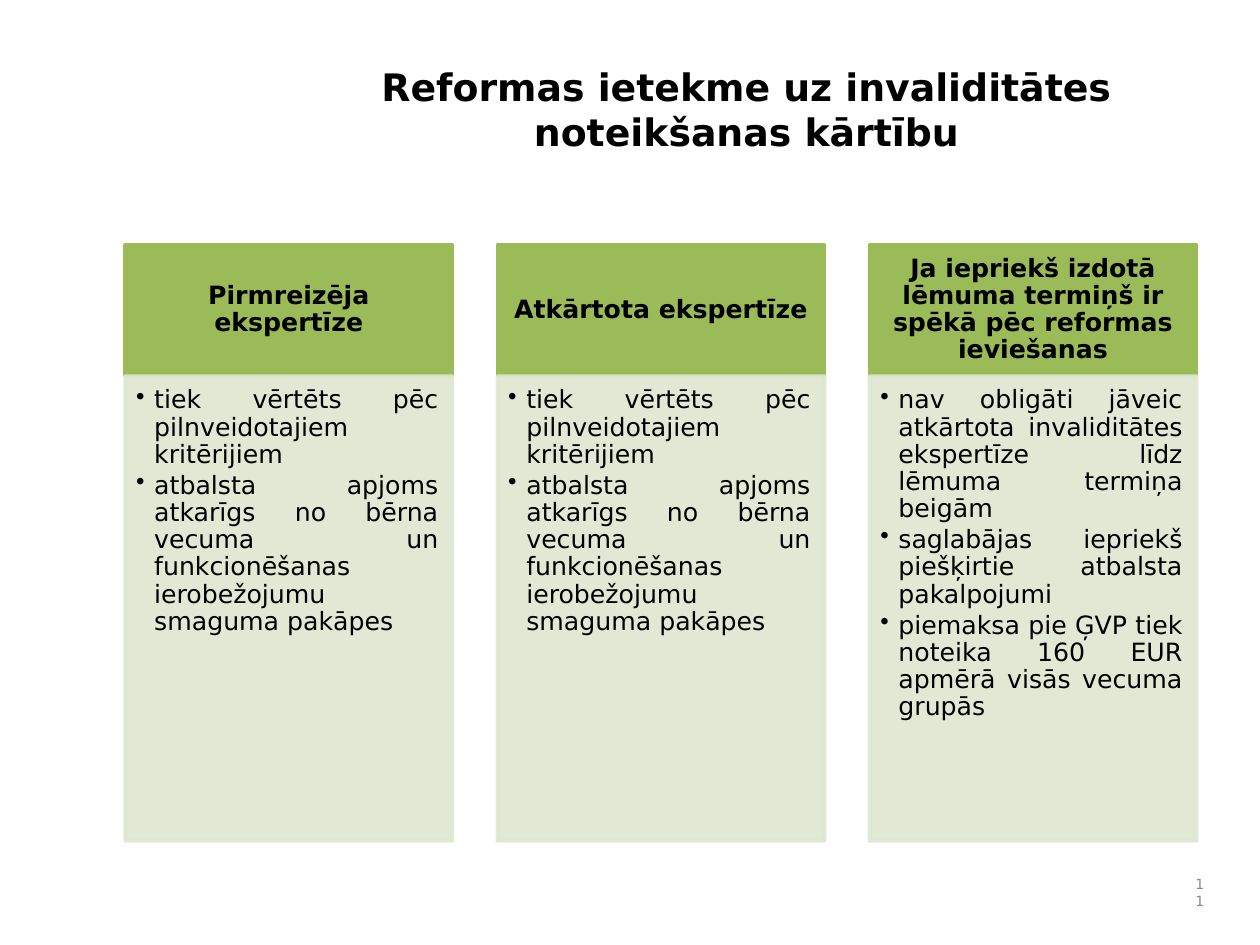
from pptx import Presentation
from pptx.dml.color import RGBColor as RGB
from pptx.enum.shapes import MSO_SHAPE as SHAPE
from pptx.enum.text import MSO_ANCHOR as ANCHOR, PP_ALIGN as ALIGN
from pptx.oxml.ns import qn
from pptx.util import Inches, Pt
from lxml.etree import SubElement as Sub

HUES = {"head": "9BBB59", "panel": "DEE7D1", "ink": "000000", "page": "898989"}

REVIEW = [
    "tiek vērtēts pēc pilnveidotajiem kritērijiem",
    "atbalsta apjoms atkarīgs no bērna vecuma un funkcionēšanas ierobežojumu smaguma pakāpes",
]
CARDS = [
    ("Pirmreizēja ekspertīze", REVIEW),
    ("Atkārtota ekspertīze", REVIEW),
    ("Ja iepriekš izdotā lēmuma termiņš ir spēkā pēc reformas ieviešanas", [
        "nav obligāti jāveic atkārtota invaliditātes ekspertīze līdz lēmuma termiņa beigām",
        "saglabājas iepriekš piešķirtie atbalsta pakalpojumi",
        "piemaksa pie ĢVP tiek noteika 160 EUR apmērā visās vecuma grupās",
    ]),
]


class Deck:
    font = "DejaVu Sans"

    def __init__(self, wide, high):
        self.prs = Presentation()
        self.prs.slide_width, self.prs.slide_height = Inches(wide), Inches(high)
        self.slide = self.prs.slides.add_slide(self.prs.slide_layouts[6])

    def frame(self, shape, pads, anchor):
        tf = shape.text_frame
        tf.word_wrap = True
        tf.vertical_anchor = anchor
        (tf.margin_left, tf.margin_top,
         tf.margin_right, tf.margin_bottom) = map(Inches, pads)
        return tf

    def add_text(self, para, words, size, align, hue="ink", bold=False):
        para.alignment = align
        run = para.add_run()
        run.text = words
        run.font.name = self.font
        run.font.size = Pt(size)
        run.font.bold = bold
        run.font.color.rgb = RGB.from_string(HUES[hue])

    def label(self, box, words, size, align, hue="ink", bold=False):
        shape = self.slide.shapes.add_textbox(*map(Inches, box))
        tf = self.frame(shape, (0.1, 0.05, 0.1, 0.05), ANCHOR.MIDDLE)
        self.add_text(tf.paragraphs[0], words, size, align, hue, bold)

    def block(self, box, hue, alpha=None):
        shape = self.slide.shapes.add_shape(SHAPE.RECTANGLE, *map(Inches, box))
        shape.shadow.inherit = False
        shape.fill.solid()
        shape.line.width = Pt(2)
        for part in (shape.fill.fore_color, shape.line.color):
            part.rgb = RGB.from_string(HUES[hue])
        if alpha:
            for tone in shape._element.spPr.iter(qn("a:srgbClr")):
                Sub(tone, qn("a:alpha")).set("val", str(alpha * 1000))
        return shape

    def head(self, box, words):
        tf = self.frame(self.block(box, "head"), (0.09, 0.05, 0.09, 0.05), ANCHOR.MIDDLE)
        para = tf.paragraphs[0]
        para.line_spacing = 0.9
        self.add_text(para, words, 12, ALIGN.CENTER, bold=True)

    def panel(self, box, items):
        tf = self.frame(self.block(box, "panel", 90), (0.07, 0.07, 0.09, 0.1), ANCHOR.TOP)
        for i, item in enumerate(items):
            para = tf.add_paragraph() if i else tf.paragraphs[0]
            para.level = 1
            para.line_spacing = 0.9
            para.space_after = Pt(1.8)
            props = para._p.get_or_add_pPr()
            props.set("marL", str(Inches(0.12)))
            props.set("indent", str(Inches(-0.12)))
            Sub(props, qn("a:buChar")).set("char", "•")
            self.add_text(para, item, 12, ALIGN.JUSTIFY)


def main():
    deck = Deck(8.33, 6.25)

    # Title
    deck.label((1.96, 0.35, 5.95, 0.74),
               "Reformas ietekme uz invaliditātes noteikšanas kārtību",
               18, ALIGN.CENTER, bold=True)

    # Three columns, each a heading above a list
    left, step, wide = 0.83, 2.46, 2.16
    for i, (title, items) in enumerate(CARDS):
        x = left + i * step
        deck.head((x, 1.62, wide, 0.86), title)
        deck.panel((x, 2.49, wide, 3.07), items)

    # Page number
    deck.label((7.78, 5.76, 0.28, 0.28), "11", 6.7, ALIGN.RIGHT, "page")

    deck.prs.save("out.pptx")


if __name__ == "__main__":
    main()
